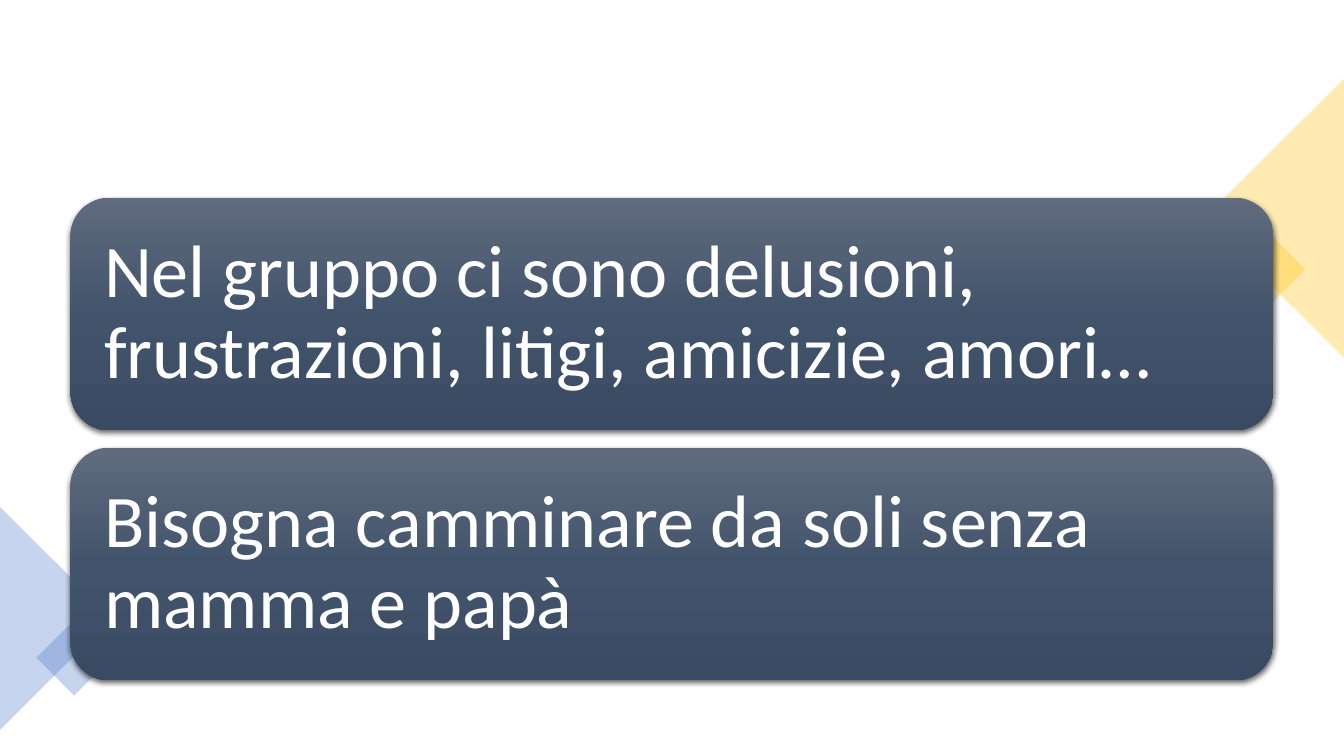
from copy import deepcopy

from lxml.etree import SubElement
from pptx import Presentation
from pptx.dml.color import RGBColor
from pptx.enum.shapes import MSO_SHAPE
from pptx.enum.text import MSO_ANCHOR, PP_ALIGN
from pptx.oxml.ns import qn
from pptx.util import Inches, Pt

GOLD = RGBColor(0xFF, 0xC0, 0x00)
BLUE = RGBColor(0x44, 0x72, 0xC4)
WHITE = RGBColor(0xFF, 0xFF, 0xFF)
BLACK = RGBColor(0x00, 0x00, 0x00)
CARD_STOPS = [
    (0, RGBColor(0x60, 0x6B, 0x7D)),
    (0.5, RGBColor(0x42, 0x54, 0x6C)),
    (1, RGBColor(0x39, 0x4A, 0x62)),
]

MESSAGES = [
    "Nel gruppo ci sono delusioni, frustrazioni, litigi, amicizie, amori…",
    "Bisogna camminare da soli senza mamma e papà",
]
# preset, left, top, width, height, rotation, colour
CORNER_ORNAMENTS = [
    (MSO_SHAPE.RECTANGLE, 12.09, 2.32, 0.71, 0.71, 45, GOLD),
    (MSO_SHAPE.ISOSCELES_TRIANGLE, 11.25, 1.47, 2.77, 1.39, 270, GOLD),
    (MSO_SHAPE.ISOSCELES_TRIANGLE, -0.55, 5.58, 2.21, 1.11, 90, BLUE),
    (MSO_SHAPE.RECTANGLE, 0.47, 6.26, 0.53, 0.53, 45, BLUE),
]

CARD_LEFT, CARD_TOP = 0.7, 1.96
CARD_WIDTH, CARD_HEIGHT = 11.93, 2.31
CARD_STEP = CARD_HEIGHT + 0.17
CARD_INSET = 0.22


def add_plain_shape(page, preset, left, top, width, height):
    """Add a shape without outline or shadow; lengths are in inches."""
    shape = page.shapes.add_shape(
        preset, Inches(left), Inches(top), Inches(width), Inches(height))
    shape.shadow.inherit = False
    shape.line.fill.background()
    return shape


def add_ornament(page, preset, left, top, width, height, rotation, colour):
    shape = add_plain_shape(page, preset, left, top, width, height)
    shape.rotation = rotation
    shape.fill.solid()
    shape.fill.fore_color.rgb = colour
    colour_node = shape.element.spPr.find(qn("a:solidFill"))[0]
    SubElement(colour_node, qn("a:alpha"), val="30000")


def fill_with_gradient(shape, stops):
    """Fill from top to bottom with any number of (position, colour) stops."""
    shape.fill.gradient()
    shape.fill.gradient_angle = 270
    stop_list = shape.element.spPr.find(qn("a:gradFill")).find(qn("a:gsLst"))
    while len(stop_list) < len(stops):
        stop_list.append(deepcopy(stop_list[0]))
    for stop, (position, colour) in zip(shape.fill.gradient_stops, stops):
        stop.position = position
        stop.color.rgb = colour


def add_soft_shadow(shape):
    effects = shape.element.spPr.find(qn("a:effectLst"))
    shadow = SubElement(
        effects, qn("a:outerShdw"), blurRad=str(Pt(4.5)), dist=str(Pt(1.5)),
        dir="5400000", algn="ctr", rotWithShape="0")
    colour_node = SubElement(shadow, qn("a:srgbClr"), val=str(BLACK))
    SubElement(colour_node, qn("a:alpha"), val="63000")


def add_card(page, top, message):
    card = add_plain_shape(
        page, MSO_SHAPE.ROUNDED_RECTANGLE, CARD_LEFT, top, CARD_WIDTH, CARD_HEIGHT)
    fill_with_gradient(card, CARD_STOPS)
    add_soft_shadow(card)

    frame = card.text_frame
    frame.word_wrap = True
    frame.vertical_anchor = MSO_ANCHOR.MIDDLE
    frame.margin_left = frame.margin_right = Inches(CARD_INSET)
    frame.margin_top = frame.margin_bottom = Inches(CARD_INSET)
    para = frame.paragraphs[0]
    para.alignment = PP_ALIGN.LEFT
    para.line_spacing = 0.9
    span = para.add_run()
    span.text = message
    span.font.name = "Calibri"
    span.font.size = Pt(53)
    span.font.color.rgb = WHITE


def main():
    deck = Presentation()
    deck.slide_width, deck.slide_height = Inches(13.33), Inches(7.5)
    page = deck.slides.add_slide(deck.slide_layouts[6])
    for ornament in CORNER_ORNAMENTS:
        add_ornament(page, *ornament)
    for row, message in enumerate(MESSAGES):
        add_card(page, CARD_TOP + row * CARD_STEP, message)
    deck.save("out.pptx")


if __name__ == "__main__":
    main()
